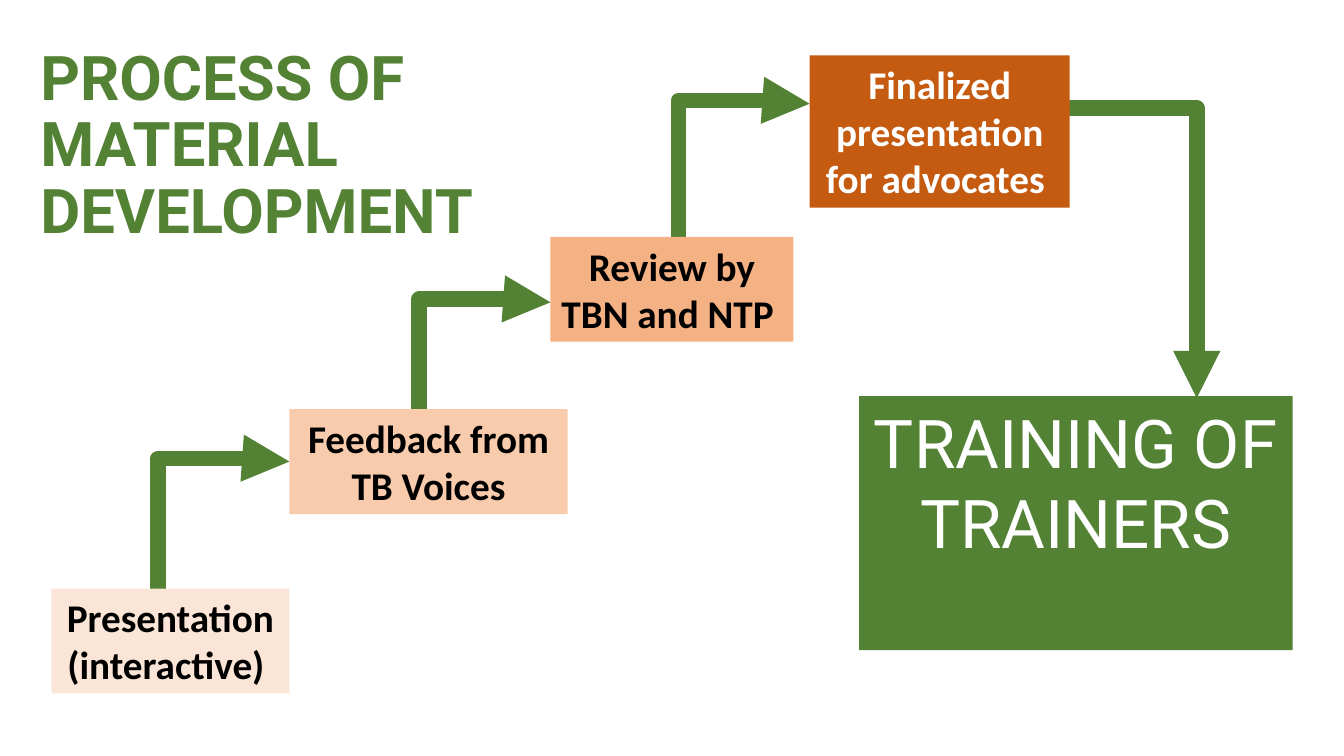
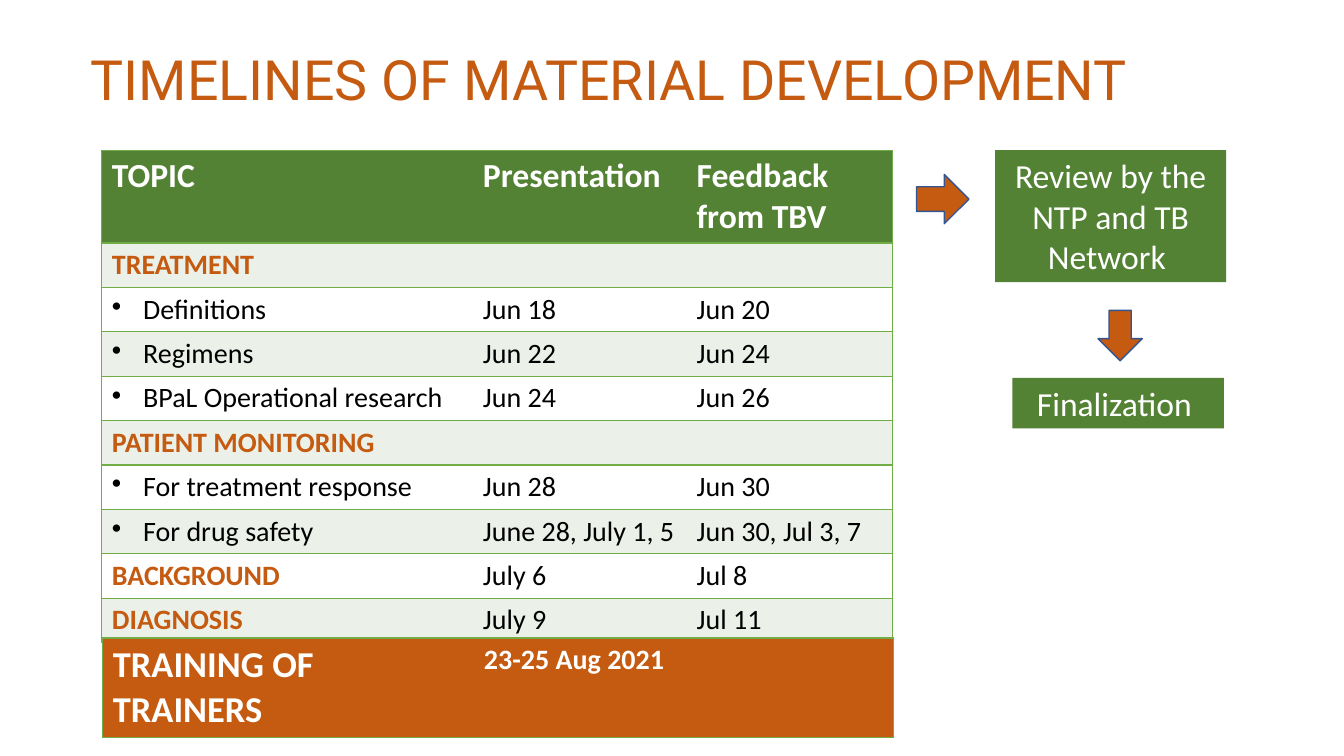
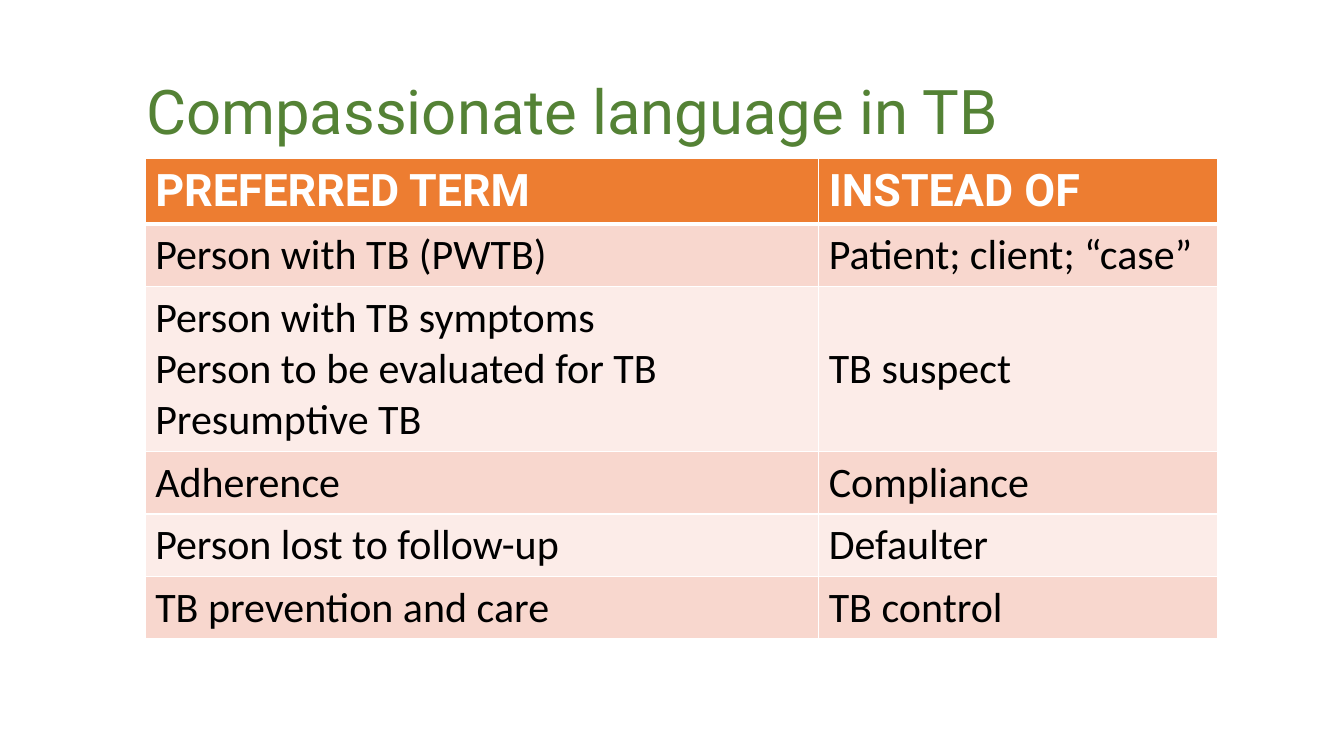
from lxml import etree
from pptx import Presentation, util as u
from pptx.dml.color import RGBColor
from pptx.enum import shapes, text
from pptx.oxml.ns import qn

PX = 9144
SLIDE_SIZE = (1333, 750)
BODY_FONT, TITLE_FONT = "Calibri", "Roboto"
COLOURS = {
    "green": "548235", "leaf": "70AD47", "mint": "EBF1E9",
    "rust": "C55A11", "orange": "ED7D31", "apricot": "F4B183",
    "peach": "F8CBAD", "cream": "FBE5D6", "rose": "F8D7CE",
    "blush": "FCECE8", "navy": "325491", "white": "FFFFFF", "black": "000000",
}
NO_GRID_STYLE = "{2D5ABB26-0587-4C30-8999-92F81FD0307C}"

STEPS = [
    ("Presentation (interactive) ", (51, 584, 236, 104), "cream", "black"),
    ("Feedback from TB Voices", (287, 406, 276, 104), "peach", "black"),
    ("Review by TBN and NTP ", (546, 235, 241, 104), "apricot", "black"),
    ("Finalized presentation for advocates ", (803, 55, 258, 151), "rust", "white"),
]
GOAL = ("TRAINING OF TRAINERS", (852, 393, 430, 252))
LINKS = [
    ((157, 608), (287, 458), 1.021),
    ((416, 450), (546, 300), 1.021),
    ((673, 253), (803, 103), 1.021),
    ((1031, 116), (1187, 395), -0.031),
]

TIMELINE_COLUMNS = (368, 212, 204)
TIMELINE = [
    ("TOPIC", "Presentation", "Feedback from TBV"),
    ("TREATMENT", "", ""),
    ("Definitions", "Jun 18", "Jun 20"),
    ("Regimens", "Jun 22", "Jun 24"),
    ("BPaL Operational research", "Jun 24", "Jun 26"),
    ("PATIENT MONITORING", "", ""),
    ("For treatment response", "Jun 28", "Jun 30"),
    ("For drug safety", "June 28, July 1, 5", "Jun 30, Jul 3, 7"),
    ("BACKGROUND", "July 6", "Jul 8"),
    ("DIAGNOSIS", "July 9", "Jul 11"),
]
TRAINING = [("TRAINING OF TRAINERS", "23-25 Aug 2021", "")]
REVIEWS = [
    ("Review by the NTP and TB Network ", (987, 149, 229, 131)),
    ("Finalization ", (1004, 375, 210, 50)),
]
ARROWS = [
    (shapes.MSO_SHAPE.RIGHT_ARROW, (909, 173, 52, 49)),
    (shapes.MSO_SHAPE.DOWN_ARROW, (1089, 308, 44, 50)),
]

TERMS = [
    ("PREFERRED TERM", "INSTEAD OF"),
    ("Person with TB (PWTB)", "Patient; client; “case”"),
    ("Person with TB symptoms\nPerson to be evaluated for TB\nPresumptive TB", "TB suspect"),
    ("Adherence", "Compliance"),
    ("Person lost to follow-up", "Defaulter"),
    ("TB prevention and care", "TB control"),
]


def emu(box):
    return [u.Emu(round(length * PX)) for length in box]


def rgb(colour):
    return RGBColor.from_string(COLOURS[colour])


def style(frame, size, colour, bold=False, font=BODY_FONT, align=None):
    for paragraph in frame.paragraphs:
        paragraph.alignment = align
        paragraph.font.name = font
        paragraph.font.size = u.Pt(size)
        paragraph.font.bold = bold
        paragraph.font.color.rgb = rgb(colour)


def add_titled_slide(deck, title, box, size, colour, bold=False):
    slide = deck.slides.add_slide(deck.slide_layouts[5])
    heading = slide.shapes.title
    heading.left, heading.top, heading.width, heading.height = emu(box)
    frame = heading.text_frame
    frame.text = title
    frame.auto_size = text.MSO_AUTO_SIZE.NONE
    frame.vertical_anchor = text.MSO_ANCHOR.MIDDLE
    frame.paragraphs[0].line_spacing = 0.9
    style(frame, size, colour, bold, TITLE_FONT, text.PP_ALIGN.LEFT)
    return slide


def add_block(slide, kind, box, fill, outline=None):
    block = slide.shapes.add_shape(kind, *emu(box))
    block.shadow.inherit = False
    block.fill.solid()
    block.fill.fore_color.rgb = rgb(fill)
    if outline:
        block.line.color.rgb = rgb(outline)
        block.line.width = u.Pt(1)
    else:
        block.line.fill.background()
    return block


def add_label(slide, words, box, fill, size, colour, bold=False, font=BODY_FONT):
    frame = add_block(slide, shapes.MSO_SHAPE.RECTANGLE, box, fill).text_frame
    frame.text = words
    frame.word_wrap = True
    frame.vertical_anchor = text.MSO_ANCHOR.TOP
    style(frame, size, colour, bold, font, text.PP_ALIGN.CENTER)


def add_link(slide, start, end, bend):
    (x1, y1), (x2, y2) = start, end
    cx, cy = (x1 + x2) / 2, (y1 + y2) / 2
    climb = 1 if y2 < y1 else -1
    half_w, half_h = abs(y2 - y1) / 2, climb * (x2 - x1) / 2
    link = slide.shapes.add_connector(
        shapes.MSO_CONNECTOR.ELBOW,
        *emu((cx + half_w, cy + half_h, cx - half_w, cy - half_h)))
    link.line.color.rgb = rgb("green")
    link.line.width = u.Pt(11.25)
    etree.SubElement(link.line._get_or_add_ln(), qn("a:tailEnd"), type="triangle")
    properties = link._element.spPr
    etree.SubElement(properties, qn("a:effectLst"))
    properties.find(qn("a:xfrm")).set("rot", str((180 - climb * 90) * 60000))
    guides = properties.find(qn("a:prstGeom")).get_or_add_avLst()
    etree.SubElement(guides, qn("a:gd"), name="adj1", fmla=f"val {round(bend * 100000)}")


def add_border(cell, side, colour, points):
    line = etree.SubElement(cell._tc.get_or_add_tcPr(), qn(f"a:ln{side}"),
                            w=str(u.Pt(points)))
    fill = etree.SubElement(line, qn("a:solidFill"))
    etree.SubElement(fill, qn("a:srgbClr"), val=COLOURS[colour])


def add_grid(slide, rows, corner, widths, heights, look, border,
             inner_lines=False, header_line=1, anchor=text.MSO_ANCHOR.TOP):
    table = slide.shapes.add_table(
        len(rows), len(widths), *emu((*corner, sum(widths), sum(heights)))).table
    table._tbl.tblPr.find(qn("a:tableStyleId")).text = NO_GRID_STYLE
    for column, width in zip(table.columns, emu(widths)):
        column.width = width
    for row, height in zip(table.rows, emu(heights)):
        row.height = height
    for r, row in enumerate(rows):
        for c, words in enumerate(row):
            cell = table.cell(r, c)
            fill, font = look(r, c, words)
            if inner_lines or c == 0:
                add_border(cell, "L", border, 1)
            if inner_lines or c == len(row) - 1:
                add_border(cell, "R", border, 1)
            add_border(cell, "T", border, header_line if r == 1 else 1)
            add_border(cell, "B", border, header_line if r == 0 else 1)
            cell.fill.solid()
            cell.fill.fore_color.rgb = rgb(fill)
            cell.vertical_anchor = anchor
            cell.text_frame.text = words
            style(cell.text_frame, **font)
    return table


def timeline_look(r, c, words):
    if r == 0:
        return "green", dict(size=24, colour="white", bold=True)
    section = c == 0 and words.isupper()
    return ("mint" if r % 2 else "white",
            dict(size=20, colour="rust" if section else "black", bold=section))


def training_look(r, c, words):
    return "rust", dict(size=20 if c else 26, colour="white", bold=True)


def terms_look(r, c, words):
    if r == 0:
        return "orange", dict(size=32, colour="white", bold=True, font=TITLE_FONT)
    return "rose" if r % 2 else "blush", dict(size=30, colour="black")


def add_bullet(paragraph):
    properties = paragraph._p.get_or_add_pPr()
    properties.set("marL", str(31 * PX))
    properties.set("indent", str(-31 * PX))
    bullet = etree.Element(qn("a:buChar"), char="•")
    properties.find(qn("a:defRPr")).addprevious(bullet)


def build_process(deck):
    slide = add_titled_slide(deck, "PROCESS OF MATERIAL DEVELOPMENT",
                             (30, 73, 467, 145), 44, "green", True)
    for start, end, bend in LINKS:
        add_link(slide, start, end, bend)
    for words, box, fill, colour in STEPS:
        add_label(slide, words, box, fill, 28, colour, True)
    add_label(slide, *GOAL, "green", 48, "white", font=TITLE_FONT)


def build_timelines(deck):
    slide = add_titled_slide(deck, "TIMELINES OF MATERIAL DEVELOPMENT",
                             (80, 40, 1150, 84), 39.6, "rust")
    heights = [92] + [44] * (len(TIMELINE) - 1)
    table = add_grid(slide, TIMELINE, (101, 149), TIMELINE_COLUMNS, heights,
                     timeline_look, "leaf")
    for r, (topic, *_) in enumerate(TIMELINE):
        if not topic.isupper():
            add_bullet(table.cell(r, 0).text_frame.paragraphs[0])
    for words, box in REVIEWS:
        add_label(slide, words, box, "green", 24, "white")
    for kind, box in ARROWS:
        add_block(slide, kind, box, "rust", "navy")
    add_grid(slide, TRAINING, (102, 633), TIMELINE_COLUMNS, [97], training_look, "leaf")


def build_language(deck):
    slide = add_titled_slide(deck, "Compassionate language in TB",
                             (135, 41, 1150, 145), 44, "green")
    add_grid(slide, TERMS, (144, 157), (668, 396), (65, 62, 164, 62, 62, 62),
             terms_look, "white", True, 3, text.MSO_ANCHOR.MIDDLE)


def main():
    deck = Presentation()
    deck.slide_width, deck.slide_height = emu(SLIDE_SIZE)
    build_process(deck)
    build_timelines(deck)
    build_language(deck)
    deck.save("out.pptx")


if __name__ == "__main__":
    main()
